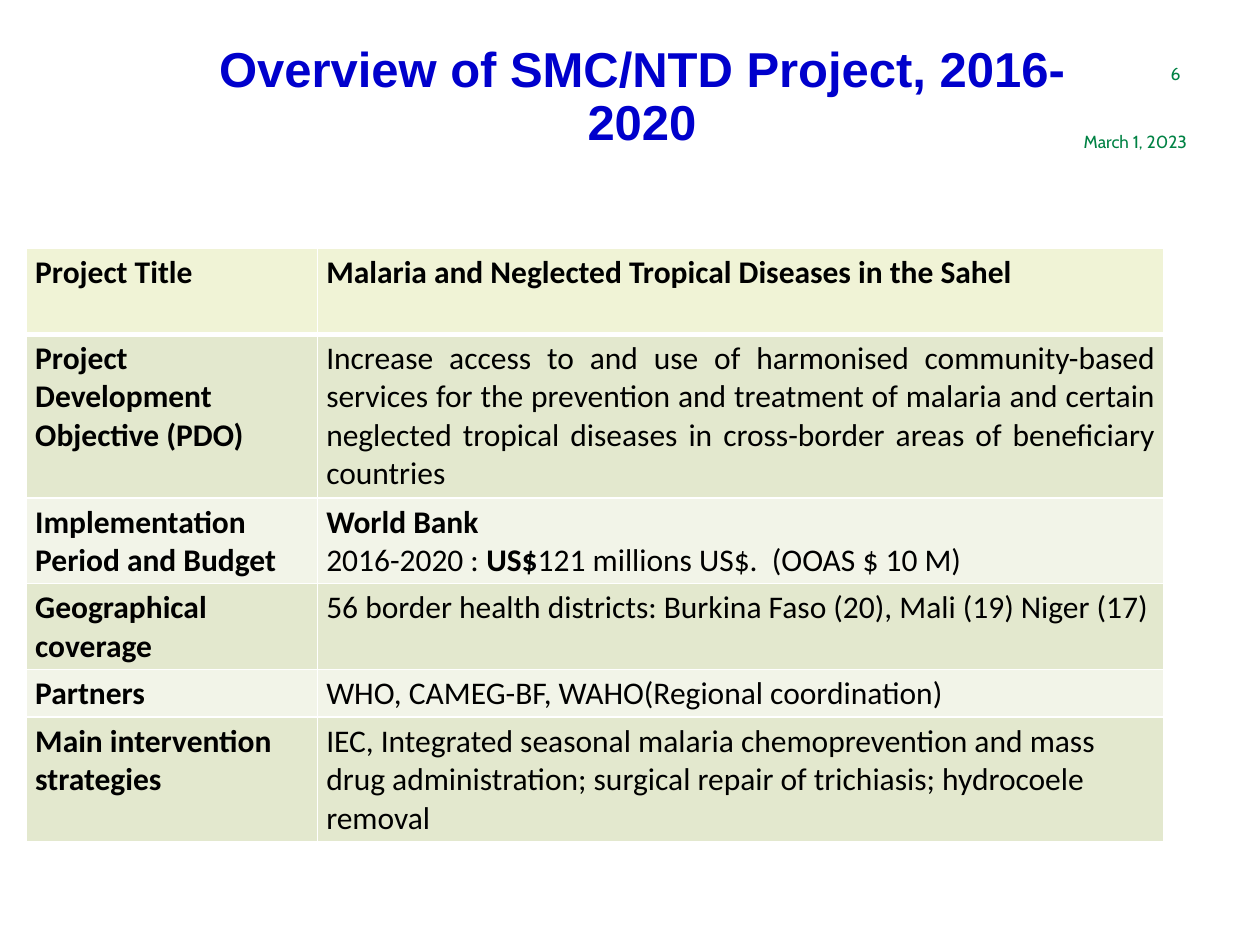
from dataclasses import dataclass

from lxml.etree import SubElement
from pptx import Presentation
from pptx.dml.color import RGBColor
from pptx.enum.text import MSO_ANCHOR, PP_ALIGN
from pptx.oxml.ns import qn
from pptx.util import Inches, Pt

WIDE, HIGH = 10, 7.5
COLS = (2.31, 6.72)
GREEN, BLUE, BLACK, WHITE = "008244", "0000CC", "000000", "FFFFFF"
HEAD, DARK, PALE = "F0F3D6", "E3E8CE", "F2F4E8"
BODY = {"name": "Calibri", "size": Pt(18)}
NOTE = {"name": "Cabin", "size": Pt(10)}
TITLE = {"name": "Arial", "size": Pt(28), "bold": True}


@dataclass
class Run:
    text: str
    bold: bool = False


@dataclass
class Row:
    label: str
    paras: list[list[Run]]
    high: float
    align: PP_ALIGN = PP_ALIGN.LEFT


@dataclass
class Note:
    text: str
    left: float
    top: float


FULL = PP_ALIGN.JUSTIFY
ROWS = [
    Row("Project Title",
        [[Run("Malaria and Neglected Tropical Diseases in the Sahel", True)]], 0.68, FULL),
    Row("Project Development Objective (PDO)",
        [[Run("Increase access to and use of harmonised community-based services for the "
              "prevention and treatment of malaria and certain neglected tropical diseases "
              "in cross-border areas of beneficiary countries")]], 1.3, FULL),
    Row("Implementation Period and Budget",
        [[Run("World Bank", True)],
         [Run("2016-2020 :"), Run(" US$", True),
          Run("121 millions US$.  (OOAS $ 10 M)")]], 0.68),
    Row("Geographical coverage",
        [[Run("56 border health districts: Burkina Faso (20), Mali (19) Niger (17)")]],
        0.68, FULL),
    Row("Partners", [[Run("WHO, CAMEG-BF, WAHO(Regional coordination)")]], 0.38, FULL),
    Row("Main intervention strategies",
        [[Run("IEC, Integrated seasonal malaria chemoprevention and mass drug "
              "administration; surgical repair of trichiasis; hydrocoele removal")]], 0.99),
]
NOTES = [Note("6", 0.586, 0.067), Note("March 1, 2023", 0.591, 0.139)]


def rgb(code: str) -> RGBColor:
    return RGBColor.from_string(code)


def apply(item, form: dict) -> None:
    for key, value in form.items():
        setattr(item, key, value)


def place(x: float, y: float, w: float, h: float) -> dict:
    """Turn shares of the slide's size into lengths."""
    return {"left": Inches(x * WIDE), "top": Inches(y * HIGH),
            "width": Inches(w * WIDE), "height": Inches(h * HIGH)}


def write(para, runs: list[Run], form: dict, color: str) -> None:
    for part in runs:
        run = para.add_run()
        run.text = part.text
        apply(run.font, {"bold": part.bold, **form})
        run.font.color.rgb = rgb(color)


def edge(cell, side: str, size: float) -> None:
    """Add one white cell border."""
    line = SubElement(cell._tc.get_or_add_tcPr(), qn(f"a:ln{side}"), w=str(Pt(size)))
    fill = SubElement(line, qn("a:solidFill"))
    SubElement(fill, qn("a:srgbClr"), val=WHITE)


def draw_cell(cell, paras: list[list[Run]], align: PP_ALIGN, row: int) -> None:
    thick = {("B", 0), ("T", 1)}
    for side in "LRTB":
        edge(cell, side, 3 if (side, row) in thick else 1)
    cell.fill.solid()
    cell.fill.fore_color.rgb = rgb(HEAD if row == 0 else DARK if row % 2 else PALE)
    apply(cell, {"margin_left": Inches(0.07), "margin_right": Inches(0.07),
                 "margin_top": Inches(0.04), "margin_bottom": Inches(0.04)})
    frame = cell.text_frame
    for i, runs in enumerate(paras):
        para = frame.add_paragraph() if i else frame.paragraphs[0]
        para.alignment = align
        write(para, runs, BODY, BLACK)


def draw_table(slide, rows: list[Row]) -> None:
    area = place(0.021, 0.263, sum(COLS) / WIDE, sum(r.high for r in rows) / HIGH)
    grid = slide.shapes.add_table(len(rows), len(COLS), **area).table
    for col, width in zip(grid.columns, COLS):
        col.width = Inches(width)
    for i, row in enumerate(rows):
        grid.rows[i].height = Inches(row.high)
        draw_cell(grid.cell(i, 0), [[Run(row.label, True)]], PP_ALIGN.LEFT, i)
        draw_cell(grid.cell(i, 1), row.paras, row.align, i)


def draw_note(slide, note: Note) -> None:
    frame = slide.shapes.add_textbox(**place(note.left, note.top, 0.351, 0.023)).text_frame
    apply(frame, {"word_wrap": True, "margin_left": 0, "margin_right": 0,
                  "margin_top": 0, "margin_bottom": 0})
    para = frame.paragraphs[0]
    para.alignment = PP_ALIGN.RIGHT
    write(para, [Run(note.text)], NOTE, GREEN)


def draw_title(slide, text: str) -> None:
    title = slide.shapes.title
    apply(title, place(0.163, 0.039, 0.693, 0.129))
    apply(title.text_frame, {"word_wrap": True, "vertical_anchor": MSO_ANCHOR.MIDDLE})
    para = title.text_frame.paragraphs[0]
    apply(para, {"alignment": PP_ALIGN.CENTER, "line_spacing": 0.9})
    write(para, [Run(text)], TITLE, BLUE)


def main() -> None:
    deck = Presentation()
    apply(deck, {"slide_width": Inches(WIDE), "slide_height": Inches(HIGH)})
    slide = deck.slides.add_slide(deck.slide_layouts[5])
    for note in NOTES:
        draw_note(slide, note)
    draw_title(slide, "Overview of SMC/NTD Project, 2016-2020")
    draw_table(slide, ROWS)
    deck.save("out.pptx")


if __name__ == "__main__":
    main()
